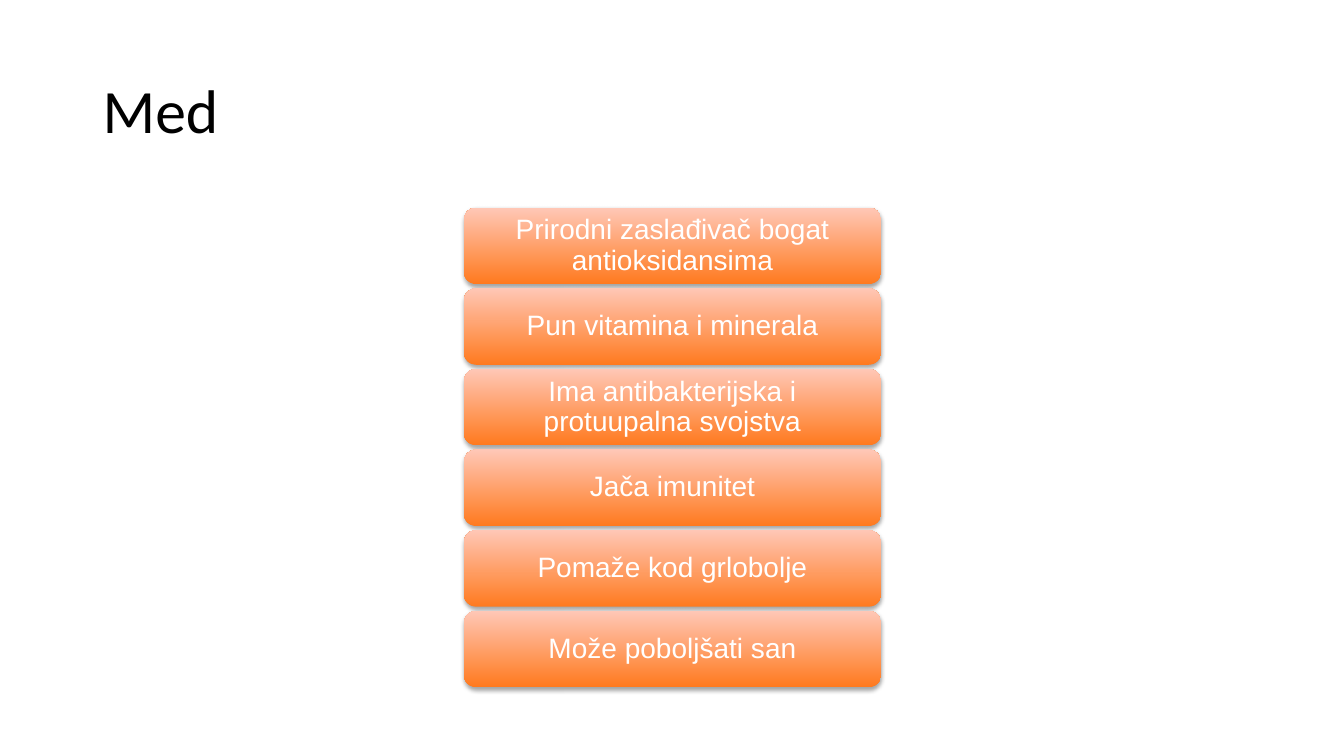
"""Build a slide that lists the benefits of honey as a stack of bars."""
from dataclasses import dataclass

from lxml import etree
from pptx import Presentation, util as u
from pptx.dml.color import RGBColor
from pptx.enum import shapes, text
from pptx.oxml.ns import qn

WIDE, HIGH = 13.33, 7.5
LEFT, TOP, ROW = 4.6, 2.06, 0.8
BAR_W, BAR_H = 4.14, 0.76
FACTS = (
    "Prirodni zaslađivač bogat antioksidansima",
    "Pun vitamina i minerala",
    "Ima antibakterijska i protuupalna svojstva",
    "Jača imunitet",
    "Pomaže kod grlobolje",
    "Može poboljšati san",
)


@dataclass(frozen=True)
class Style:
    font: str
    size: int
    color: str
    align: text.PP_ALIGN
    side: float
    edge: float


HEAD = Style("Calibri", 44, "000000", text.PP_ALIGN.LEFT, 0.1, 0.05)
BODY = Style("Arial", 20, "FFFFFF", text.PP_ALIGN.CENTER, 0.08, 0.04)


def paint(target, code: str) -> None:
    target.rgb = RGBColor.from_string(code)


def write(shape, words: str, style: Style) -> None:
    frame = shape.text_frame
    frame.text = words
    frame.word_wrap = True
    frame.vertical_anchor = text.MSO_ANCHOR.MIDDLE
    frame.margin_left = frame.margin_right = u.Inches(style.side)
    frame.margin_top = frame.margin_bottom = u.Inches(style.edge)
    para = frame.paragraphs[0]
    para.alignment = style.align
    para.line_spacing = 0.9
    font = para.runs[0].font
    font.name, font.size = style.font, u.Pt(style.size)
    paint(font.color, style.color)


def shade(shape) -> None:
    shape.shadow.inherit = False
    effects = shape._element.spPr.find(qn("a:effectLst"))
    outer = etree.SubElement(
        effects, qn("a:outerShdw"), blurRad=str(u.Pt(3.1)),
        dist=str(u.Pt(1.8)), dir="5400000", rotWithShape="0")
    color = etree.SubElement(outer, qn("a:srgbClr"), val="000000")
    etree.SubElement(color, qn("a:alpha"), val="35000")


def add_bar(slide, row: int, words: str) -> None:
    box = map(u.Inches, (LEFT, TOP + row * ROW, BAR_W, BAR_H))
    bar = slide.shapes.add_shape(shapes.MSO_SHAPE.ROUNDED_RECTANGLE, *box)
    bar.fill.gradient()
    bar.fill.gradient_angle = 90
    for stop, code in zip(bar.fill.gradient_stops, ("FF7A1F", "FFC7B6")):
        paint(stop.color, code)
    bar.line.fill.background()
    shade(bar)
    write(bar, words, BODY)


def main() -> None:
    deck = Presentation()
    deck.slide_width, deck.slide_height = u.Inches(WIDE), u.Inches(HIGH)
    slide = deck.slides.add_slide(deck.slide_layouts[6])
    title = slide.shapes.add_textbox(*map(u.Inches, (0.92, 0.4, 11.5, 1.45)))
    write(title, "Med", HEAD)
    for row, words in enumerate(FACTS):
        add_bar(slide, row, words)
    deck.save("out.pptx")


if __name__ == "__main__":
    main()
